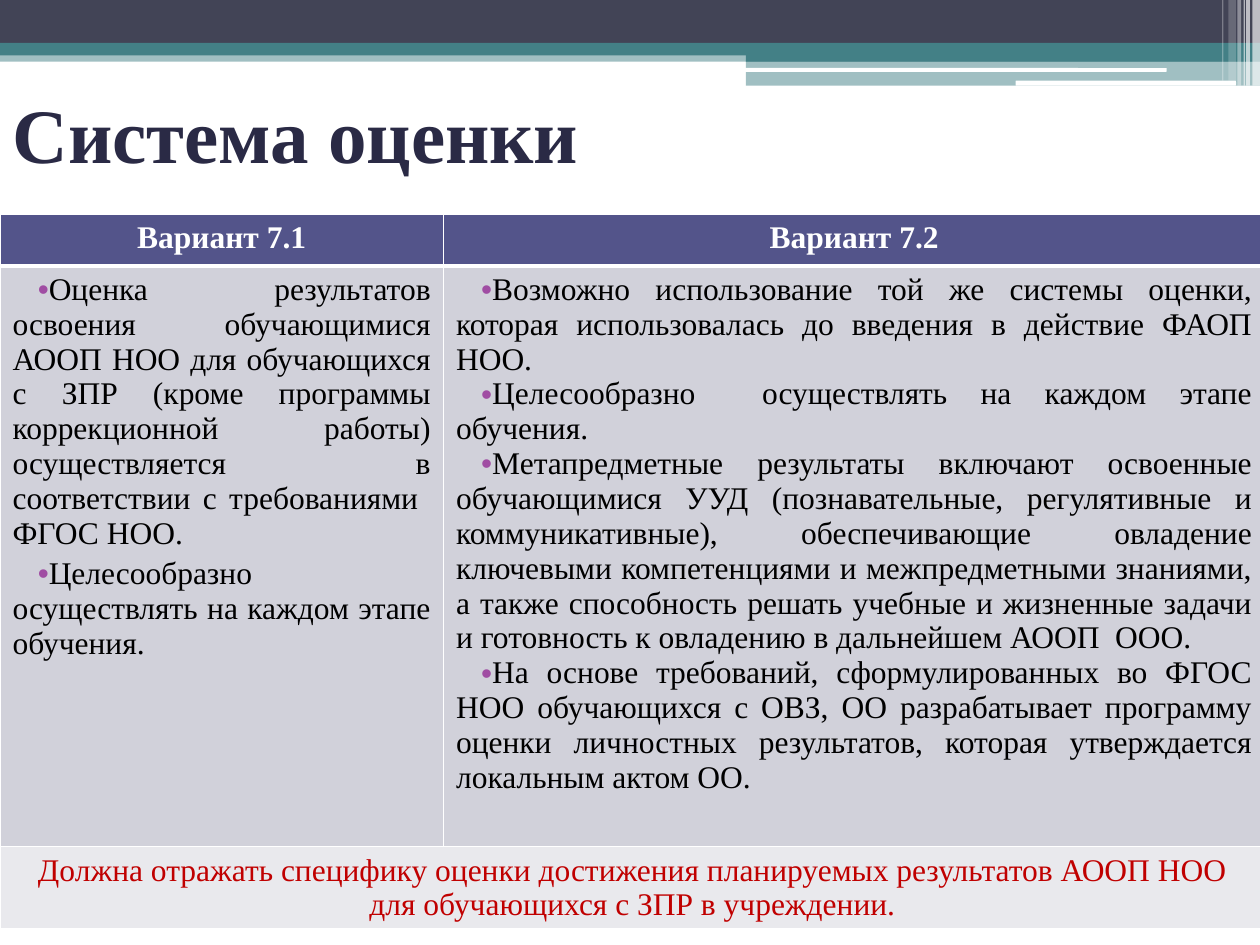
from typing import NamedTuple
from lxml.etree import SubElement as Sub
from pptx import Presentation
from pptx.dml.color import RGBColor as Rgb
from pptx.enum.shapes import MSO_SHAPE as Form
from pptx.enum.text import MSO_ANCHOR as Anchor, PP_ALIGN as Align
from pptx.oxml.ns import qn
from pptx.util import Inches, Pt

UNIT = Inches(0.01)
COLS, ROWS = 1000, 750
FONT = "Times New Roman"
HUES = {
    "white": "FFFFFF", "slate": "424456", "teal": "438086", "title": "2A2A45",
    "head": "53548A", "body": "D1D1DA", "foot": "E9E9ED", "black": "000000",
    "red": "C00000", "dot": "A04DA3",
}


class Bar(NamedTuple):
    left: float
    top: float
    wide: float
    high: float
    hue: str
    alpha: int = 100
    form: Form = Form.RECTANGLE


class Block(NamedTuple):
    row: int
    col: int
    fill: str
    ink: str
    lines: list[str]
    bold: bool = False
    list: bool = False
    gap: float = 0
    over: int = 1
    under: int = 1


ROUND = Form.ROUNDED_RECTANGLE
BARS = [
    Bar(0, 40, COLS, 9, "teal", 50),
    Bar(0, 0, COLS, 34, "slate"),
    Bar(0, 34, COLS, 10, "teal"),
    Bar(592, 39, 408, 10, "teal"),
    Bar(592, 48, 408, 20, "teal", 50),
    Bar(591, 54, 335, 3, "white", form=ROUND),
    Bar(806, 64, 175, 4, "white", form=ROUND),
] + [
    Bar(left, 0, wide, high, "white", alpha)
    for left, wide, high, alpha in [
        (994, 6, 68, 65), (989, 3, 68, 65), (987, 1, 68, 60),
        (982, 3, 68, 40), (975, 6, 64, 20), (970, 1, 64, 30),
    ]
]

STAGE = "Целесообразно  осуществлять на каждом этапе обучения."
BLOCKS = [
    Block(0, 0, "head", "white", ["Вариант 7.1"], bold=True, under=3),
    Block(0, 1, "head", "white", ["Вариант 7.2"], bold=True, under=3),
    Block(1, 0, "body", "black", [
        "Оценка результатов освоения обучающимися АООП НОО для обучающихся с ЗПР "
        "(кроме программы коррекционной работы) осуществляется в соответствии "
        "с требованиями  ФГОС НОО.",
        STAGE,
    ], list=True, gap=3, over=3),
    Block(1, 1, "body", "black", [
        "Возможно использование той же системы оценки, которая использовалась "
        "до введения в действие ФАОП НОО.",
        STAGE,
        "Метапредметные результаты включают освоенные обучающимися УУД "
        "(познавательные, регулятивные и коммуникативные), обеспечивающие овладение "
        "ключевыми компетенциями и межпредметными знаниями, а также способность "
        "решать учебные и жизненные задачи и готовность к овладению в дальнейшем "
        "АООП  ООО.",
        "На основе требований, сформулированных во ФГОС НОО обучающихся с ОВЗ, "
        "ОО разрабатывает программу оценки личностных результатов, которая "
        "утверждается локальным актом ОО.",
    ], list=True, over=3),
    Block(2, 0, "foot", "red", [
        "Должна отражать специфику оценки достижения планируемых результатов "
        "АООП НОО для обучающихся с ЗПР в учреждении.",
    ]),
]


def grid(*vals: float) -> list[int]:
    return [round(val * UNIT) for val in vals]


def paint(fill, hue: str) -> None:
    fill.solid()
    fill.fore_color.rgb = Rgb.from_string(HUES[hue])


def style(para, size: float, hue: str, bold: bool) -> None:
    for run in para.runs:
        font = run.font
        font.name, font.size, font.bold = FONT, Pt(size), bold
        font.color.rgb = Rgb.from_string(HUES[hue])


def draw_bar(slide, bar: Bar) -> None:
    shape = slide.shapes.add_shape(
        bar.form, *grid(bar.left, bar.top, bar.wide, bar.high))
    shape.shadow.inherit = False
    shape.line.fill.background()
    paint(shape.fill, bar.hue)
    if bar.alpha < 100:
        tint = shape.fill._xPr.find(qn("a:solidFill"))[0]
        Sub(tint, qn("a:alpha"), val=str(bar.alpha * 1000))


def add_dot(para) -> None:
    props = para._p.get_or_add_pPr()
    props.set("marL", "0")
    props.set("indent", str(Inches(0.2)))
    tint = Sub(props, qn("a:buClr"))
    Sub(tint, qn("a:srgbClr"), val=HUES["dot"])
    Sub(props, qn("a:buFont"), typeface="Arial")
    Sub(props, qn("a:buChar"), char="•")


def add_edges(cell, over: int, under: int) -> None:
    props = cell._tc.get_or_add_tcPr()
    sides = [("L", 1), ("R", 1), ("T", over), ("B", under)]
    for spot, (side, wide) in enumerate(sides):
        line = Sub(props, qn(f"a:ln{side}"), w=str(Pt(wide)))
        Sub(Sub(line, qn("a:solidFill")), qn("a:srgbClr"), val=HUES["white"])
        props.insert(spot, line)


def fill_cell(table, block: Block) -> None:
    cell = table.cell(block.row, block.col)
    paint(cell.fill, block.fill)
    add_edges(cell, block.over, block.under)
    frame = cell.text_frame
    frame.text = "\n".join(block.lines)
    for rank, para in enumerate(frame.paragraphs):
        para.alignment = Align.JUSTIFY if block.list else Align.CENTER
        if rank and block.gap:
            para.space_before = Pt(block.gap)
        if block.list:
            add_dot(para)
        style(para, 18, block.ink, block.bold)


def add_title(slide, text: str) -> None:
    title = slide.shapes.title
    title.left, title.top, title.width, title.height = grid(0, 47, COLS, 117)
    frame = title.text_frame
    frame.text = text
    frame.vertical_anchor = Anchor.MIDDLE
    para = frame.paragraphs[0]
    para.alignment = Align.LEFT
    style(para, 44, "title", True)


def add_grid(slide) -> None:
    wides, highs = (352, 652), (41, 461, 64)
    table = slide.shapes.add_table(
        len(highs), len(wides), *grid(0, 170, sum(wides), sum(highs))).table
    for col, wide in zip(table.columns, grid(*wides)):
        col.width = wide
    for row, high in zip(table.rows, grid(*highs)):
        row.height = high
    table.cell(2, 0).merge(table.cell(2, 1))
    for block in BLOCKS:
        fill_cell(table, block)


def main() -> None:
    deck = Presentation()
    deck.slide_width, deck.slide_height = grid(COLS, ROWS)
    slide = deck.slides.add_slide(deck.slide_layouts[5])
    for bar in BARS:
        draw_bar(slide, bar)
    add_title(slide, "Система оценки")
    add_grid(slide)
    deck.save("out.pptx")


if __name__ == "__main__":
    main()
